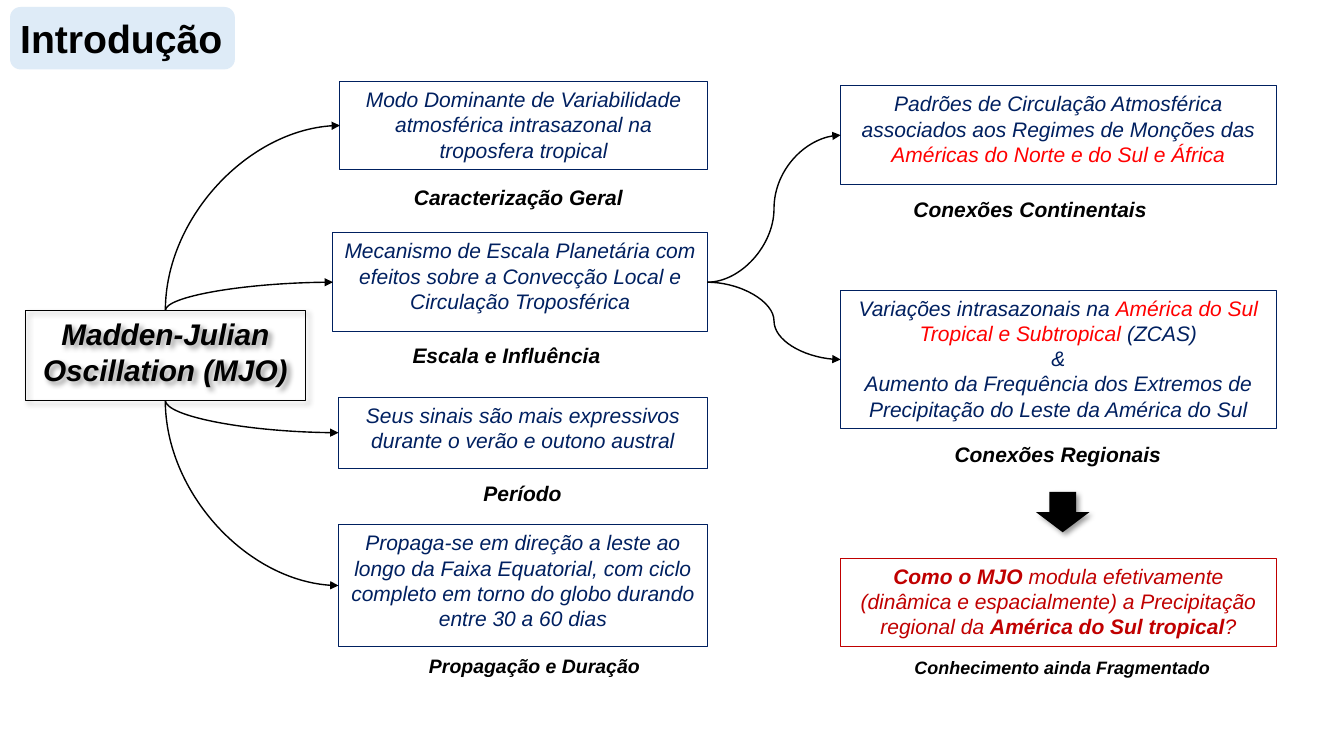
"""Build the introduction slide: a concept map of the Madden-Julian Oscillation."""
from lxml.etree import SubElement
from pptx import Presentation
from pptx.dml.color import RGBColor
from pptx.enum.shapes import MSO_CONNECTOR as Connector, MSO_SHAPE as Shape
from pptx.enum.text import MSO_ANCHOR as Anchor, MSO_AUTO_SIZE as AutoSize, PP_ALIGN as Align
from pptx.oxml.ns import qn
from pptx.util import Pt

COLORS = {"black": "000000", "navy": "002060", "red": "FF0000",
          "crimson": "C00000", "badge": "DEEBF7"}
FONT = "Arial"
TITLE = "Introdução"
TITLE_AREA = (7.2, 2.2, 224.6, 49.7)
BADGE_AREA = (7.2, 5, 160.6, 44.6)
HUB_TEXT = [[("Madden-Julian Oscillation (MJO)", "black", True)]]
HUB_AREA = (18, 221.8, 200.2, 64.1)
ARROW_AREA = (740, 351.4, 38.2, 28.8)

TOPIC_RIGHT = 505.3
TOPICS = [
    (242.8, 58.4, 62.6, "Modo Dominante de Variabilidade atmosférica intrasazonal na troposfera tropical"),
    (237.8, 166.4, 70.4, "Mecanismo de Escala Planetária com efeitos sobre a Convecção Local e "
                         "Circulação Troposférica"),
    (241.8, 283.6, 51, "Seus sinais são mais expressivos durante o verão e outono austral"),
    (241.8, 375, 86.5, "Propaga-se em direção a leste ao longo da Faixa Equatorial, com ciclo completo "
                       "em torno do globo durando entre 30 a 60 dias"),
]
BRANCHING_TOPIC = 1

LINK_LEFT, LINK_WIDTH = 600.5, 311
LINKS = [
    (61.4, 70.4, [[
        ("Padrões de Circulação Atmosférica associados aos Regimes de Monções das ", "navy", False),
        ("Américas do Norte e do Sul e África", "red", False)]]),
    (207.4, 98.8, [
        [("Variações intrasazonais na ", "navy", False),
         ("América do Sul Tropical e Subtropical ", "red", False),
         ("(ZCAS)", "navy", False)],
        [("&", "navy", False)],
        [("Aumento da Frequência dos Extremos de Precipitação do Leste da América do Sul",
          "navy", False)]]),
]
QUESTION_TOP, QUESTION_HEIGHT = 399, 63
QUESTION = [[
    ("Como o MJO ", "crimson", True),
    ("modula efetivamente (dinâmica e espacialmente) a Precipitação regional da ", "crimson", False),
    ("América do Sul tropical", "crimson", True),
    ("?", "crimson", False)]]

CAPTION_HEIGHT = 30.2
CAPTIONS = [
    ("Caracterização Geral", 285, 128.2, 170.6, 15, 1),
    ("Escala e Influência", 276.5, 241.2, 170.6, 15, 1),
    ("Período", 288, 339.8, 170.6, 15, 1),
    ("Propagação e Duração", 296.6, 463.7, 170.6, 13.9, 1),
    ("Conexões Continentais", 642.2, 136.8, 187.2, 15, 1),
    ("Conexões Regionais", 670.3, 311.8, 170.6, 15, 1),
    ("Conhecimento ainda Fragmentado", 638.6, 467.3, 240.5, 12.8, 0.9),
]


def color(name):
    return RGBColor.from_string(COLORS[name])


def points(values):
    return [Pt(value) for value in values]


def write(box, paragraphs, size, spacing=1):
    frame = box.text_frame
    frame.word_wrap = True
    frame.vertical_anchor = Anchor.TOP
    for index, runs in enumerate(paragraphs):
        para = frame.add_paragraph() if index else frame.paragraphs[0]
        para.alignment = Align.CENTER
        para.line_spacing = spacing
        for text, name, bold in runs:
            span = para.add_run()
            span.text = text
            font = span.font
            font.name, font.size, font.bold, font.italic = FONT, Pt(size), bold, True
            font.color.rgb = color(name)


def add_box(slide, area, paragraphs, line, size=15):
    box = slide.shapes.add_shape(Shape.RECTANGLE, *points(area))
    box.shadow.inherit = False
    box.fill.background()
    box.line.color.rgb = color(line)
    box.line.width = Pt(0.75)
    write(box, paragraphs, size)
    return box


def add_solid(slide, kind, area, fill):
    solid = slide.shapes.add_shape(kind, *points(area))
    solid.shadow.inherit = False
    solid.fill.solid()
    solid.fill.fore_color.rgb = color(fill)
    solid.line.fill.background()
    return solid


def cast_shadow(shape):
    effects = shape._element.spPr.find(qn("a:effectLst"))
    shadow = SubElement(effects, qn("a:outerShdw"), blurRad=str(Pt(4)), dist=str(Pt(3)),
                        dir=str(45 * 60000), algn="tl", rotWithShape="0")
    tone = SubElement(shadow, qn("a:srgbClr"), val=COLORS["black"])
    SubElement(tone, qn("a:alpha"), val="40000")


def add_curve(slide, start, end):
    curve = slide.shapes.add_connector(Connector.CURVE, *points(start + end))
    curve.line.color.rgb = color("black")
    curve.line.width = Pt(1)
    SubElement(curve.line._get_or_add_ln(), qn("a:tailEnd"), type="triangle")
    SubElement(curve._element.spPr, qn("a:effectLst"))
    return curve


def add_quarter_curve(slide, start, end):
    """Leave start vertically and reach end horizontally."""
    middle_x, middle_y = (start[0] + end[0]) / 2, (start[1] + end[1]) / 2
    half_width = abs(end[1] - start[1]) / 2
    half_height = (end[0] - start[0]) / 2
    rises = end[1] < start[1]
    if rises:
        half_height = -half_height
    curve = add_curve(slide, (middle_x + half_width, middle_y - half_height),
                      (middle_x - half_width, middle_y + half_height))
    properties = curve._element.spPr
    properties.find(qn("a:xfrm")).set("rot", str((90 if rises else 270) * 60000))
    properties.find(qn("a:prstGeom")).set("prst", "curvedConnector2")


def add_title(slide):
    title = slide.shapes.title
    title.left, title.top, title.width, title.height = points(TITLE_AREA)
    frame = title.text_frame
    frame.text = TITLE
    frame.auto_size = AutoSize.NONE
    frame.vertical_anchor = Anchor.MIDDLE
    para = frame.paragraphs[0]
    para.alignment = Align.JUSTIFY
    font = para.runs[0].font
    font.name, font.size, font.bold = FONT, Pt(28), True
    font.color.rgb = color("black")
    badge = add_solid(slide, Shape.ROUNDED_RECTANGLE, BADGE_AREA, "badge")
    title._element.addprevious(badge._element)


def main():
    deck = Presentation()
    deck.slide_width, deck.slide_height = Pt(960), Pt(540)
    slide = deck.slides.add_slide(deck.slide_layouts[5])
    add_title(slide)

    cast_shadow(add_box(slide, HUB_AREA, HUB_TEXT, "black", 21.3))
    hub_left, hub_top, hub_width, hub_height = HUB_AREA
    hub_x = hub_left + hub_width / 2
    for left, top, height, text in TOPICS:
        add_box(slide, (left, top, TOPIC_RIGHT - left, height), [[(text, "navy", False)]], "navy")
        target_y = top + height / 2
        hub_y = hub_top if target_y < hub_top else hub_top + hub_height
        add_quarter_curve(slide, (hub_x, hub_y), (left, target_y))

    _, branch_top, branch_height, _ = TOPICS[BRANCHING_TOPIC]
    branch = (TOPIC_RIGHT, branch_top + branch_height / 2)
    for top, height, paragraphs in LINKS:
        add_box(slide, (LINK_LEFT, top, LINK_WIDTH, height), paragraphs, "navy")
        add_curve(slide, branch, (LINK_LEFT, top + height / 2))

    cast_shadow(add_solid(slide, Shape.DOWN_ARROW, ARROW_AREA, "black"))
    add_box(slide, (LINK_LEFT, QUESTION_TOP, LINK_WIDTH, QUESTION_HEIGHT), QUESTION, "crimson")
    for text, left, top, width, size, spacing in CAPTIONS:
        caption = slide.shapes.add_textbox(*points((left, top, width, CAPTION_HEIGHT)))
        write(caption, [[(text, "black", True)]], size, spacing)

    deck.save("out.pptx")


if __name__ == "__main__":
    main()
